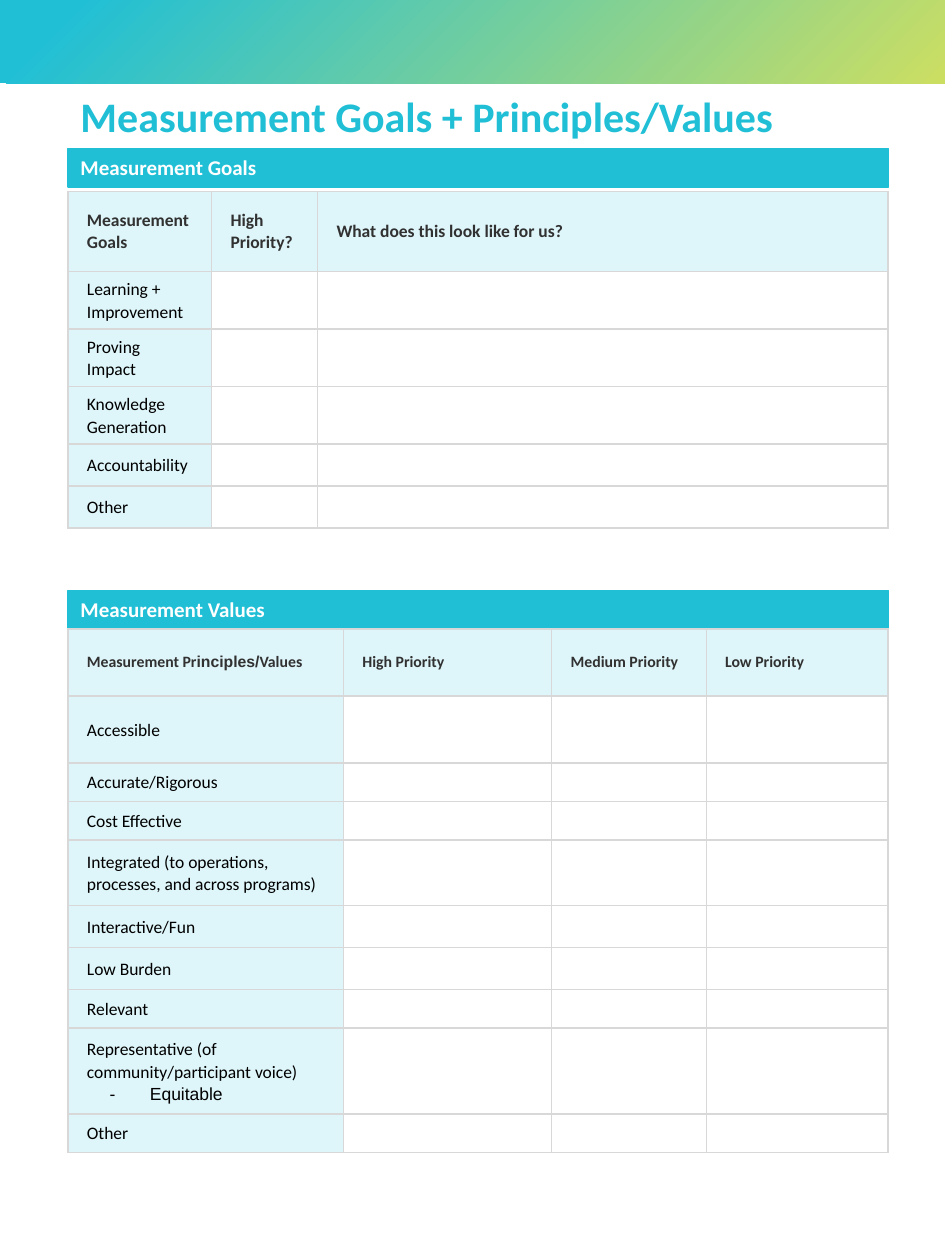
from lxml.etree import SubElement
from pptx import Presentation
from pptx.dml.color import RGBColor
from pptx.enum.shapes import MSO_SHAPE
from pptx.enum.text import MSO_ANCHOR
from pptx.oxml.ns import qn
from pptx.util import Pt

COLORS = {"teal": "20BFD6", "lime": "CCDE62", "pale": "DEF5F9", "white": "FFFFFF",
          "grid": "D8D8D8", "dark": "313131", "black": "000000"}

PAGE_W, PAGE_H = 540, 720
LEFT, WIDTH, BAR_H = 38.9, 468.7, 21.8

TITLE = "Measurement Goals + Principles/Values"
BARS = [("Measurement Goals", 85), ("Measurement Values", 337.5)]

GOALS = {
    "top": 109.4, "head_size": 10, "cols": [82.1, 60.6, 326],
    "heads": ["Measurement Goals", "High Priority?", "What does this look like for us?"],
    "head_height": 45.7,
    "rows": [("Learning + Improvement", 32.9), ("Proving Impact", 32.9),
             ("Knowledge Generation", 32.9), ("Accountability", 24), ("Other", 24)],
}
VALUES = {
    "top": 359.4, "head_size": 9, "cols": [157.4, 119, 88.3, 104],
    "heads": [[("Measurement Pr", "Calibri"), ("inciples/", "Arial"), ("Values", "Calibri")],
              "High Priority", "Medium Priority", "Low Priority"],
    "head_height": 38.3,
    "rows": [("Accessible", 38.3), ("Accurate/Rigorous", 22), ("Cost Effective", 22),
             ("Integrated (to operations, processes, and across programs)", 37.4),
             ("Interactive/Fun", 24), ("Low Burden", 24), ("Relevant", 22),
             ("Representative (of community/participant voice)", 49.1), ("Other", 22)],
}
SUB_ITEMS = {"Representative (of community/participant voice)": "Equitable"}


def rgb(name):
    return RGBColor.from_string(COLORS[name])


def set_all(obj, values):
    for name, value in values.items():
        setattr(obj, name, value)


def write(p, text, size, color, bold=False, font="Calibri"):
    runs = [(text, font)] if isinstance(text, str) else text
    for words, face in runs:
        r = p.add_run()
        r.text = words
        set_all(r.font, {"name": face, "size": Pt(size), "bold": bold})
        r.font.color.rgb = rgb(color)


def set_frame(tf):
    set_all(tf, {"word_wrap": True, "vertical_anchor": MSO_ANCHOR.TOP,
                 "margin_left": Pt(7.2), "margin_right": Pt(7.2),
                 "margin_top": Pt(3.6), "margin_bottom": Pt(3.6)})


def add_rect(s, x, y, w, h):
    sp = s.shapes.add_shape(MSO_SHAPE.RECTANGLE, Pt(x), Pt(y), Pt(w), Pt(h))
    sp.shadow.inherit = False
    return sp


def add_band(s):
    sp = add_rect(s, 0, -2.2, PAGE_W, 49.7)
    sp.line.fill.background()
    sp.fill.gradient()
    sp.fill.gradient_angle = 315
    for stop, (position, color) in zip(sp.fill.gradient_stops, [(0.08, "teal"), (1, "lime")]):
        stop.position = position
        stop.color.rgb = rgb(color)


def add_title(s):
    tf = s.shapes.add_textbox(Pt(LEFT), Pt(48.2), Pt(533.5), Pt(36)).text_frame
    set_frame(tf)
    write(tf.paragraphs[0], TITLE, 24, "teal", True)


def add_bar(s, text, top):
    sp = add_rect(s, LEFT, top, WIDTH, BAR_H)
    sp.fill.solid()
    sp.fill.fore_color.rgb = rgb("teal")
    sp.line.color.rgb = rgb("teal")
    sp.line.width = Pt(0.75)
    set_frame(sp.text_frame)
    p = sp.text_frame.paragraphs[0]
    p.alignment = 1
    write(p, text, 12, "white", True)


def format_cell(cell, fill, pad):
    set_all(cell, {"vertical_anchor": MSO_ANCHOR.MIDDLE,
                   "margin_left": Pt(10.8), "margin_right": Pt(10.8),
                   "margin_top": Pt(pad), "margin_bottom": Pt(pad)})
    tcPr = cell._tc.get_or_add_tcPr()
    for side in ("a:lnL", "a:lnR", "a:lnT", "a:lnB"):
        ln = SubElement(tcPr, qn(side), w=str(Pt(1)))
        SubElement(SubElement(ln, qn("a:solidFill")), qn("a:srgbClr"), val=COLORS["grid"])
    cell.fill.solid()
    cell.fill.fore_color.rgb = rgb(fill)


def add_sub_item(tf, text):
    p = tf.add_paragraph()
    p.line_spacing = 1.07
    pPr = p._p.get_or_add_pPr()
    pPr.set("marL", str(Pt(36)))
    pPr.set("indent", str(Pt(-23)))
    SubElement(SubElement(pPr, qn("a:buClr")), qn("a:srgbClr"), val=COLORS["black"])
    SubElement(pPr, qn("a:buFont"), typeface="Arial")
    SubElement(pPr, qn("a:buChar"), char="-")
    write(p, text, 10, "black", font="Arial")


def add_grid(s, data):
    heights = [data["head_height"]] + [height for _, height in data["rows"]]
    cols = data["cols"]
    frame = s.shapes.add_table(len(heights), len(cols), Pt(LEFT), Pt(data["top"]),
                               Pt(WIDTH), Pt(sum(heights)))
    table = frame.table
    set_all(table, {"first_row": False, "horz_banding": False})
    for column, width in zip(table.columns, cols):
        column.width = Pt(width)
    for row, height in zip(table.rows, heights):
        row.height = Pt(height)
    for cell, text in zip(table.rows[0].cells, data["heads"]):
        format_cell(cell, "pale", 10.8)
        write(cell.text_frame.paragraphs[0], text, data["head_size"], "dark", True)
    for i, (text, _) in enumerate(data["rows"], 1):
        label, *blanks = table.rows[i].cells
        format_cell(label, "pale", 3.6)
        p = label.text_frame.paragraphs[0]
        p.line_spacing = 1.07
        write(p, text, 10, "black")
        if text in SUB_ITEMS:
            add_sub_item(label.text_frame, SUB_ITEMS[text])
        for cell in blanks:
            format_cell(cell, "white", 3.6)
            SubElement(cell.text_frame.paragraphs[0]._p, qn("a:endParaRPr"), sz="1000")


def main():
    prs = Presentation()
    set_all(prs, {"slide_width": Pt(PAGE_W), "slide_height": Pt(PAGE_H)})
    s = prs.slides.add_slide(prs.slide_layouts[6])
    add_band(s)
    add_title(s)
    for text, top in BARS:
        add_bar(s, text, top)
    for data in (VALUES, GOALS):
        add_grid(s, data)
    prs.save("out.pptx")


if __name__ == "__main__":
    main()
